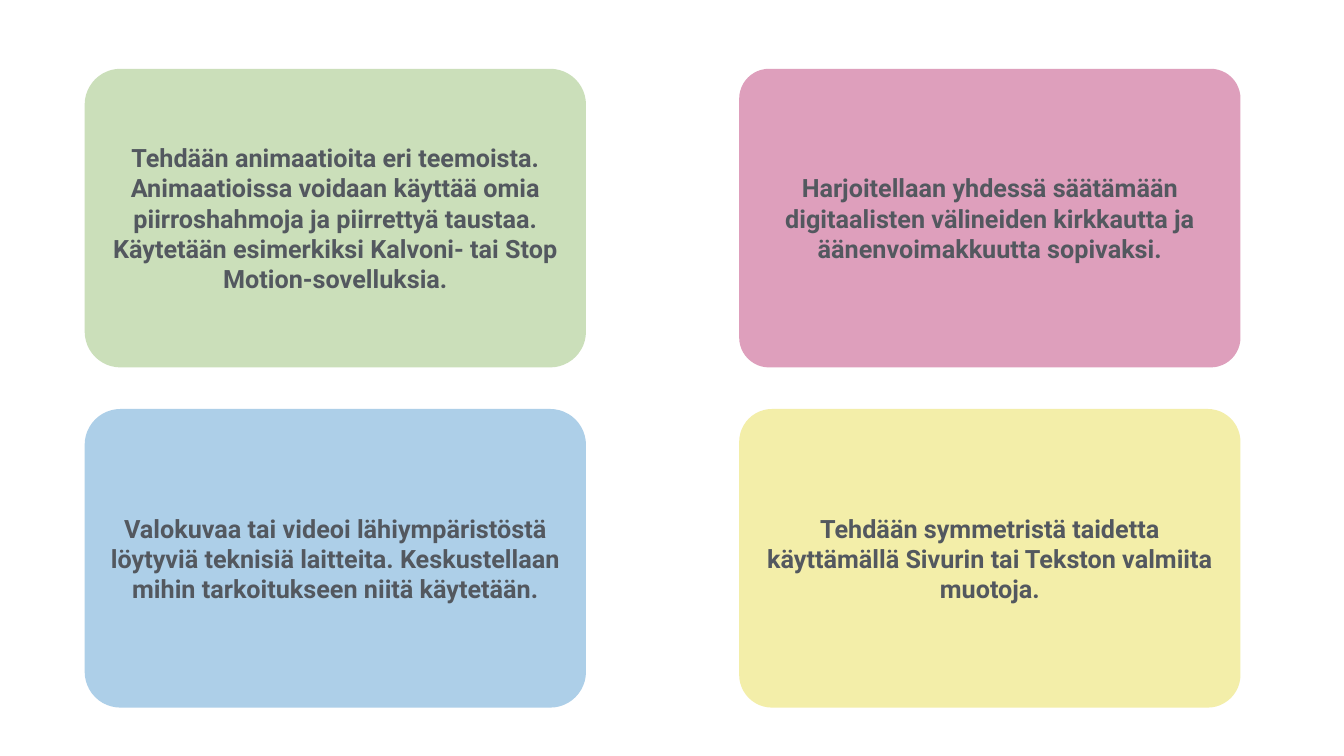
"""Build a slide of four rounded cards with ideas for digital classroom work."""
import pptx
import pptx.util
import pptx.dml.color
import pptx.enum.shapes
import pptx.enum.text

HUES = {
    "green": "CBDFBA",
    "pink": "DE9FBC",
    "blue": "ADCFE8",
    "yellow": "F3EEA9",
    "text": "53585F",
}
WIDE, HIGH = pptx.util.Inches(26.67), pptx.util.Inches(15)
LEFTS = [0.063, 0.55]
TOPS = [0.091, 0.541]
CARD_W, CARD_H = 0.373, 0.395
PAD = pptx.util.Inches(0.06)

CARDS = [
    (0, 0, "green", 0.12,
     "Tehdään animaatioita eri teemoista. Animaatioissa voidaan käyttää omia "
     "piirroshahmoja ja piirrettyä taustaa. Käytetään esimerkiksi Kalvoni- tai "
     "Stop Motion-sovelluksia."),
    (0, 1, "blue", 0.12,
     "Valokuvaa tai videoi lähiympäristöstä löytyviä teknisiä laitteita. "
     "Keskustellaan mihin tarkoitukseen niitä käytetään."),
    (1, 1, "yellow", 0.11,
     "Tehdään symmetristä taidetta käyttämällä Sivurin tai Tekston valmiita "
     "muotoja."),
    (1, 0, "pink", 0.1,
     "Harjoitellaan yhdessä säätämään digitaalisten välineiden kirkkautta ja "
     "äänenvoimakkuutta sopivaksi."),
]


def tint(name):
    return pptx.dml.color.RGBColor.from_string(HUES[name])


deck = pptx.Presentation()
deck.slide_width, deck.slide_height = WIDE, HIGH
slide = deck.slides.add_slide(deck.slide_layouts[6])

for col, row, hue, curve, words in CARDS:
    card = slide.shapes.add_shape(
        pptx.enum.shapes.MSO_SHAPE.ROUNDED_RECTANGLE,
        int(LEFTS[col] * WIDE), int(TOPS[row] * HIGH),
        int(CARD_W * WIDE), int(CARD_H * HIGH))
    card.adjustments[0] = curve
    card.shadow.inherit = False
    card.fill.solid()
    card.fill.fore_color.rgb = tint(hue)
    card.line.fill.background()

    frame = card.text_frame
    frame.word_wrap = True
    frame.vertical_anchor = pptx.enum.text.MSO_ANCHOR.MIDDLE
    frame.margin_left = frame.margin_right = PAD
    frame.margin_top = frame.margin_bottom = PAD

    para = frame.paragraphs[0]
    para.text = words
    para.alignment = pptx.enum.text.PP_ALIGN.CENTER
    para.font.name = "Roboto"
    para.font.size = pptx.util.Pt(36)
    para.font.bold = True
    para.font.color.rgb = tint("text")

deck.save("out.pptx")
